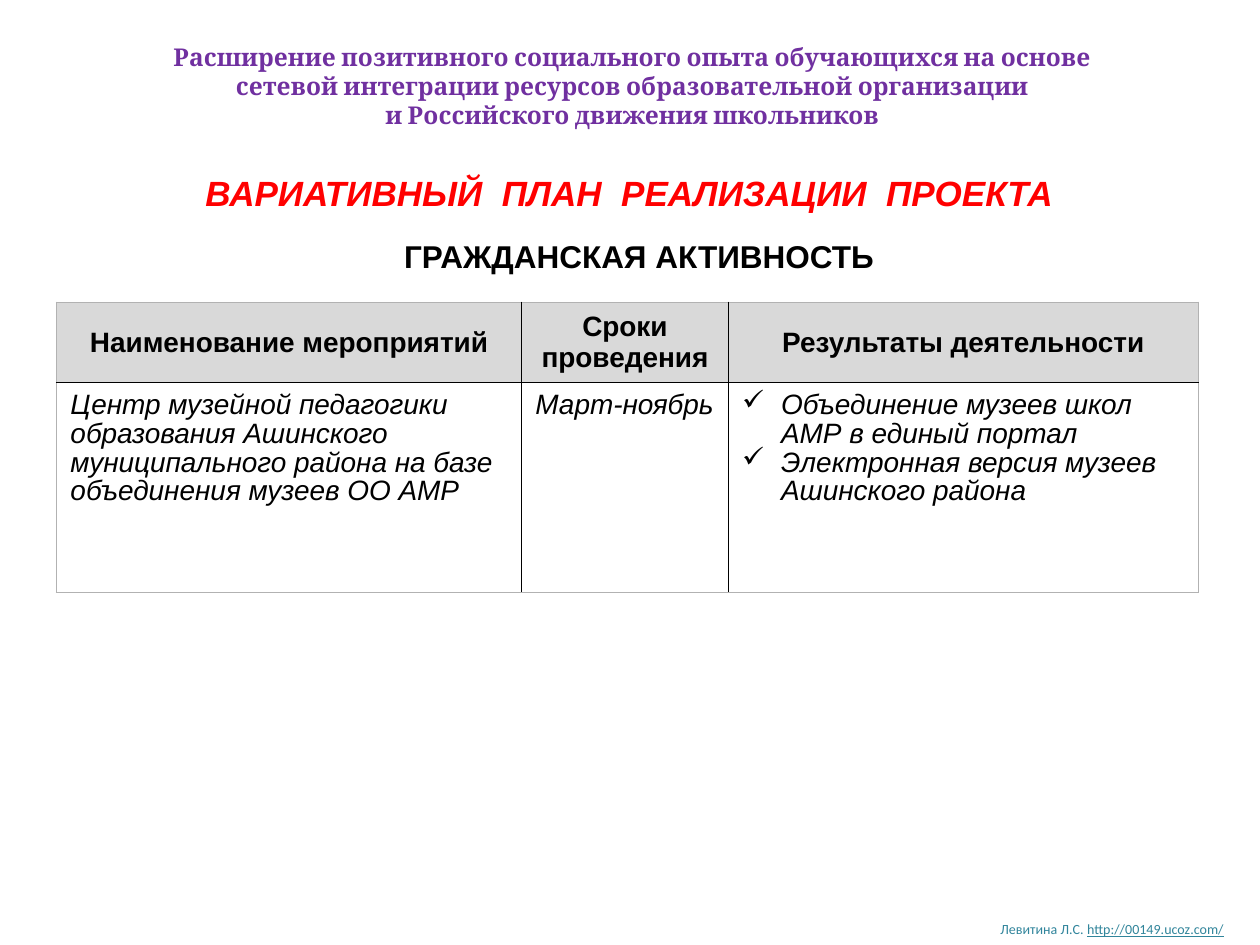
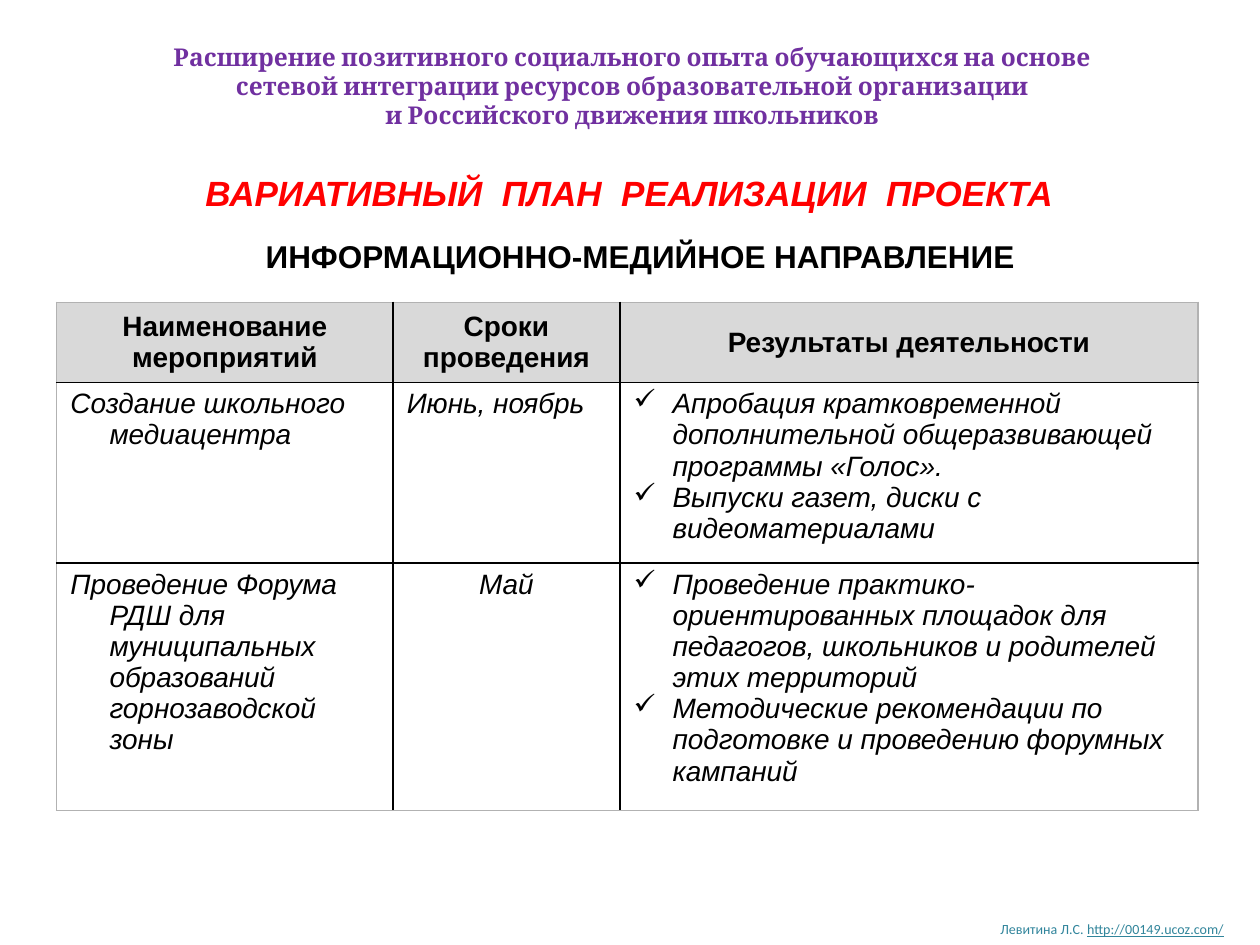
import pptx
import pptx.dml.color
import pptx.enum.text
import pptx.oxml
import pptx.oxml.ns
import pptx.util
from lxml import etree

Pt = pptx.util.Pt
CENTER = pptx.enum.text.PP_ALIGN.CENTER
LEFT = pptx.enum.text.PP_ALIGN.LEFT
TOP = pptx.enum.text.MSO_ANCHOR.TOP
MIDDLE = pptx.enum.text.MSO_ANCHOR.MIDDLE

PROJECT_FORMAT = {"name": "Cambria", "size": Pt(14), "bold": True, "color": "7030A0"}
TITLE_FORMAT = {"name": "Arial", "size": Pt(20), "bold": True, "italic": True, "color": "FF0000"}
DIRECTION_FORMAT = {"name": "Arial", "size": Pt(18), "bold": True, "color": "000000"}
HEADER_FORMAT = {"name": "Arial", "size": Pt(16), "bold": True, "italic": False, "color": "000000"}
BODY_FORMAT = {"name": "Arial", "size": Pt(16), "bold": False, "italic": True, "color": "000000"}
AUTHOR_FORMAT = {"name": "Calibri", "size": Pt(8), "color": "31859C"}
SITE_FORMAT = {**AUTHOR_FORMAT, "underline": True, "color": "31859B"}

PROJECT_LINES = [
    "Расширение позитивного социального опыта обучающихся на основе",
    "сетевой интеграции ресурсов образовательной организации",
    "и Российского движения школьников",
]
PLAN_TITLE = "ВАРИАТИВНЫЙ  ПЛАН  РЕАЛИЗАЦИИ  ПРОЕКТА"
RESULTS_HEADER = "Результаты деятельности"
HEADERS = [["Наименование мероприятий"], ["Сроки", "проведения"], [RESULTS_HEADER]]
HEADER_HEIGHT = 45.7
HEADER_FILL = "D9D9D9"
INNER_BORDER = "000000"
OUTER_BORDER = "B2B2B2"
HANGING_INDENT = 22.3


def rgb(value):
    return pptx.dml.color.RGBColor.from_string(value)


def set_format(font, values):
    for name, value in values.items():
        if name == "color":
            font.color.rgb = rgb(value)
        else:
            setattr(font, name, value)


def add_run(paragraph, text, values):
    run = paragraph.add_run()
    run.text = text
    set_format(run.font, values)


def write_lines(text_frame, lines, values, alignment=LEFT):
    for index, line in enumerate(lines):
        paragraph = text_frame.add_paragraph() if index else text_frame.paragraphs[0]
        paragraph.alignment = alignment
        add_run(paragraph, line, values)


def add_text_box(slide, left, top, width, height, wrap=True):
    text_box = slide.shapes.add_textbox(Pt(left), Pt(top), Pt(width), Pt(height))
    text_box.text_frame.word_wrap = wrap
    return text_box.text_frame


def add_footer(slide):
    paragraph = add_text_box(slide, 564.5, 522.7, 145.4, 17.3, wrap=False).paragraphs[0]
    add_run(paragraph, "Левитина Л.С. ", AUTHOR_FORMAT)
    add_run(paragraph, "http://00149.ucoz.com/", SITE_FORMAT)


def add_project_name(slide):
    text_frame = add_text_box(slide, 23, 20.2, 676.8, 58.3)
    write_lines(text_frame, PROJECT_LINES, PROJECT_FORMAT, CENTER)


def format_title(slide):
    title = slide.shapes.title
    position = {"left": 25.2, "top": 94.3, "width": 668.9, "height": 31.7}
    for name, value in position.items():
        setattr(title, name, Pt(value))
    title.text_frame.auto_size = pptx.enum.text.MSO_AUTO_SIZE.NONE
    title.text_frame.vertical_anchor = TOP
    write_lines(title.text_frame, [PLAN_TITLE], TITLE_FORMAT, CENTER)


def add_direction(slide, text, left, width):
    text_frame = add_text_box(slide, left, 131.8, width, 28.8, wrap=False)
    write_lines(text_frame, [text], DIRECTION_FORMAT)


def set_hanging_indent(paragraph, bullet=False):
    properties = paragraph._p.get_or_add_pPr()
    properties.set("marL", str(Pt(HANGING_INDENT)))
    properties.set("indent", str(-Pt(HANGING_INDENT)))
    if bullet:
        etree.SubElement(properties, pptx.oxml.ns.qn("a:buChar")).set("char", "✓")


def set_borders(cell, colors):
    properties = cell._tc.get_or_add_tcPr()
    for index, (side, color) in enumerate(colors.items()):
        border = pptx.oxml.parse_xml(
            f'<a:ln{side} {pptx.oxml.ns.nsdecls("a")} w="{Pt(1)}"><a:solidFill>'
            f'<a:srgbClr val="{color}"/></a:solidFill></a:ln{side}>'
        )
        properties.insert(index, border)


def format_cell(cell, anchor, margin_top, fill=None):
    margins = {"margin_left": 7.9, "margin_right": 7.9, "margin_top": margin_top, "margin_bottom": 3.6}
    for name, value in margins.items():
        setattr(cell, name, Pt(value))
    cell.vertical_anchor = anchor
    if fill:
        cell.fill.solid()
        cell.fill.fore_color.rgb = rgb(fill)
    else:
        cell.fill.background()


def fill_body_cell(cell, lines, alignment, hanging, bullet, line_spacing, margin_top):
    format_cell(cell, TOP, margin_top)
    write_lines(cell.text_frame, lines, BODY_FORMAT, alignment)
    for paragraph in cell.text_frame.paragraphs:
        if hanging:
            set_hanging_indent(paragraph, bullet)
        if line_spacing:
            paragraph.line_spacing = line_spacing


def add_plan_table(slide, column_widths, row_heights, activities,
                   line_spacing=None, hanging_names=True, margin_top=3.6):
    heights = [HEADER_HEIGHT, *row_heights]
    table = slide.shapes.add_table(
        len(heights), len(column_widths), Pt(32.4), Pt(172.8),
        Pt(sum(column_widths)), Pt(sum(heights)),
    ).table
    table.first_row = False
    table.horz_banding = False
    for column, width in zip(table.columns, column_widths):
        column.width = Pt(width)
    for row, height in zip(table.rows, heights):
        row.height = Pt(height)

    for column, lines in enumerate(HEADERS):
        cell = table.cell(0, column)
        format_cell(cell, MIDDLE, 3.6, HEADER_FILL)
        write_lines(cell.text_frame, lines, HEADER_FORMAT, CENTER)

    for row, (name, period, period_alignment, results) in enumerate(activities, 1):
        contents = [
            ([name], LEFT, hanging_names, False),
            ([period], period_alignment, True, False),
            (results, LEFT, True, True),
        ]
        for column, content in enumerate(contents):
            fill_body_cell(table.cell(row, column), *content, line_spacing, margin_top)

    last_row, last_column = len(heights) - 1, len(column_widths) - 1
    for row in range(len(heights)):
        for column in range(len(column_widths)):
            edges = {"L": column == 0, "R": column == last_column, "T": row == 0, "B": row == last_row}
            colors = {side: OUTER_BORDER if outer else INNER_BORDER for side, outer in edges.items()}
            set_borders(table.cell(row, column), colors)


def add_plan_slide(presentation, direction, left, width):
    slide = presentation.slides.add_slide(presentation.slide_layouts[5])
    add_footer(slide)
    add_project_name(slide)
    format_title(slide)
    add_direction(slide, direction, left, width)
    return slide


def main():
    presentation = pptx.Presentation()
    presentation.slide_width = Pt(720)
    presentation.slide_height = Pt(540)

    civic_slide = add_plan_slide(presentation, "ГРАЖДАНСКАЯ АКТИВНОСТЬ", 223.9, 285.8)
    add_plan_table(
        civic_slide, [265.7, 118.1, 268.6], [120.2],
        [(
            "Центр музейной педагогики образования Ашинского муниципального района "
            "на базе объединения музеев ОО АМР",
            "Март-ноябрь", LEFT,
            ["Объединение музеев школ АМР в единый портал",
             "Электронная версия музеев Ашинского района"],
        )],
        line_spacing=0.93, hanging_names=False, margin_top=5,
    )

    media_slide = add_plan_slide(presentation, "ИНФОРМАЦИОННО-МЕДИЙНОЕ НАПРАВЛЕНИЕ", 144.7, 447.1)
    add_plan_table(
        media_slide, [192.2, 129.6, 330.5], [103, 141.3],
        [
            (
                "Создание школьного медиацентра", "Июнь, ноябрь", LEFT,
                ["Апробация кратковременной дополнительной общеразвивающей программы «Голос».",
                 "Выпуски газет, диски с видеоматериалами"],
            ),
            (
                "Проведение Форума РДШ для муниципальных образований горнозаводской зоны",
                "Май", CENTER,
                ["Проведение практико-ориентированных площадок для педагогов, "
                 "школьников и родителей этих территорий",
                 "Методические рекомендации по подготовке и проведению форумных кампаний"],
            ),
        ],
    )

    presentation.save("out.pptx")


if __name__ == "__main__":
    main()
